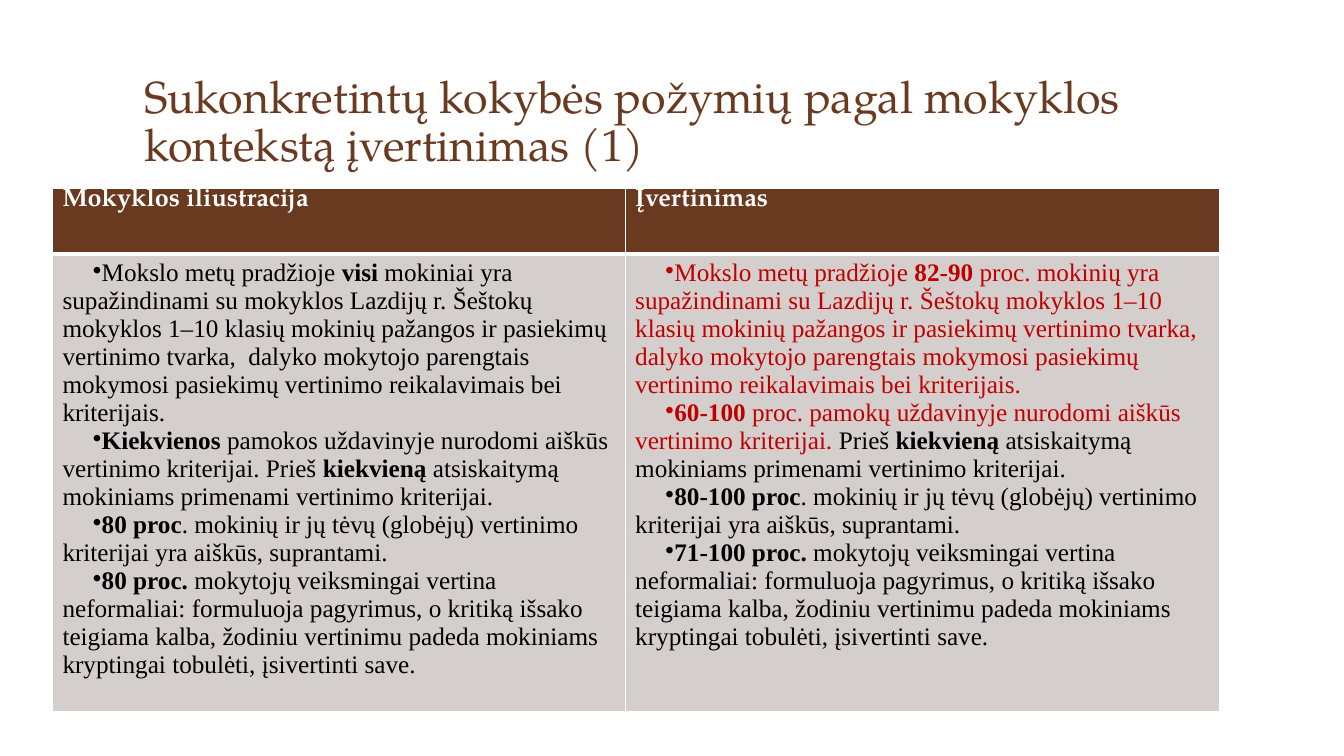
from lxml import etree
from pptx import Presentation
from pptx.dml.color import RGBColor
from pptx.enum.text import MSO_ANCHOR, PP_ALIGN
from pptx.oxml.ns import qn
from pptx.util import Inches, Pt

LEFT = PP_ALIGN.LEFT
TOP, BOTTOM = MSO_ANCHOR.TOP, MSO_ANCHOR.BOTTOM
TITLE_ONLY = 5

HEAD_FONT, BODY_FONT = "TeX Gyre Pagella", "Times New Roman"
BROWN, GREY, WHITE, BLACK, RED = "6A3A20", "D4CECD", "FFFFFF", "000000", "C00000"

TITLE = "Sukonkretintų kokybės požymių pagal mokyklos kontekstą įvertinimas (1)"
HEADERS = ["Mokyklos iliustracija", "Įvertinimas"]
RULES = ("1–10 klasių mokinių pažangos ir pasiekimų vertinimo tvarka,  dalyko mokytojo "
         "parengtais mokymosi pasiekimų vertinimo reikalavimais bei kriterijais.")
TASK = "uždavinyje nurodomi aiškūs vertinimo kriterijai. "
REMINDER = "Prieš **kiekvieną** atsiskaitymą mokiniams primenami vertinimo kriterijai."
PARENTS = ". mokinių ir jų tėvų (globėjų) vertinimo kriterijai yra aiškūs, suprantami."
TEACHERS = ("mokytojų veiksmingai vertina neformaliai: formuluoja pagyrimus, o kritiką "
            "išsako teigiama kalba, žodiniu vertinimu padeda mokiniams kryptingai "
            "tobulėti, įsivertinti save.")

ILLUSTRATION = [
    [("Mokslo metų pradžioje **visi** mokiniai yra supažindinami su mokyklos "
      "Lazdijų r. Šeštokų mokyklos " + RULES, BLACK)],
    [("**Kiekvienos** pamokos " + TASK + REMINDER, BLACK)],
    [("**80 proc**" + PARENTS, BLACK)],
    [("**80 proc. **" + TEACHERS, BLACK)],
]
EVALUATION = [
    [("Mokslo metų pradžioje **82-90 **proc. mokinių yra supažindinami su "
      "Lazdijų r. Šeštokų mokyklos " + RULES, RED)],
    [("**60-100** proc. pamokų " + TASK, RED), (REMINDER, BLACK)],
    [("**80-100 proc**" + PARENTS, BLACK)],
    [("**71-100 proc. **" + TEACHERS, BLACK)],
]


def rgb(color):
    """Return the colour for a hex string."""
    return RGBColor.from_string(color)


def add_text(p, text, font=BODY_FONT, size=18, color=BLACK, bold=False):
    """Add text to a paragraph; ** switches bold on and off."""
    for i, part in enumerate(text.split("**")):
        if part:
            r = p.add_run()
            r.text = part
            r.font.name = font
            r.font.size = Pt(size)
            r.font.bold = bold != bool(i % 2)
            r.font.color.rgb = rgb(color)


def set_bullet(p):
    """Give a paragraph a bullet with an indented first line."""
    pPr = p._p.get_or_add_pPr()
    pPr.set("marL", "0")
    pPr.set("indent", str(Inches(0.3)))
    etree.SubElement(pPr, qn("a:buChar"), char="•")


def style_cell(cell, fill, top, bottom, margin):
    """Set the fill, white borders and vertical margins of a cell."""
    tcPr = cell._tc.get_or_add_tcPr()
    for tag, width in (("a:lnL", 1), ("a:lnR", 1), ("a:lnT", top), ("a:lnB", bottom)):
        ln = etree.SubElement(tcPr, qn(tag), w=str(Pt(width)))
        etree.SubElement(etree.SubElement(ln, qn("a:solidFill")), qn("a:srgbClr"), val=WHITE)
    cell.fill.solid()
    cell.fill.fore_color.rgb = rgb(fill)
    cell.margin_top = cell.margin_bottom = Inches(margin)
    cell.vertical_anchor = TOP


def add_title(s):
    """Place and format the slide title."""
    sp = s.shapes.title
    sp.left, sp.top, sp.width, sp.height = map(Inches, (1.33, 0.47, 10.66, 1.28))
    tf = sp.text_frame
    tf.word_wrap = True
    tf.vertical_anchor = BOTTOM
    p = tf.paragraphs[0]
    p.alignment = LEFT
    p.line_spacing = 0.9
    add_text(p, TITLE, font=HEAD_FONT, size=32, color=BROWN)


def fill_body(cell, items):
    """Write a bulleted list into a cell."""
    tf = cell.text_frame
    for i, item in enumerate(items):
        p = tf.add_paragraph() if i else tf.paragraphs[0]
        p.line_spacing = Pt(20)
        set_bullet(p)
        for text, color in item:
            add_text(p, text, color=color)


def add_evaluation_table(s):
    """Add the table of illustrations and their evaluation."""
    frame = s.shapes.add_table(2, 2, Inches(0.52), Inches(1.87), Inches(11.58), Inches(5.19))
    table = frame.table
    for row, height in zip(table.rows, (0.65, 4.54)):
        row.height = Inches(height)
    for col, (header, items) in enumerate(zip(HEADERS, (ILLUSTRATION, EVALUATION))):
        table.columns[col].width = Inches((5.68, 5.9)[col])
        head, body = table.cell(0, col), table.cell(1, col)
        style_cell(head, BROWN, top=1, bottom=3, margin=0)
        style_cell(body, GREY, top=3, bottom=1, margin=0.05)
        add_text(head.text_frame.paragraphs[0], header, font=HEAD_FONT, color=WHITE, bold=True)
        fill_body(body, items)


def main():
    """Build the slide and save it."""
    prs = Presentation()
    prs.slide_width, prs.slide_height = Inches(13.33), Inches(7.5)
    s = prs.slides.add_slide(prs.slide_layouts[TITLE_ONLY])
    add_title(s)
    add_evaluation_table(s)
    prs.save("out.pptx")


if __name__ == "__main__":
    main()
